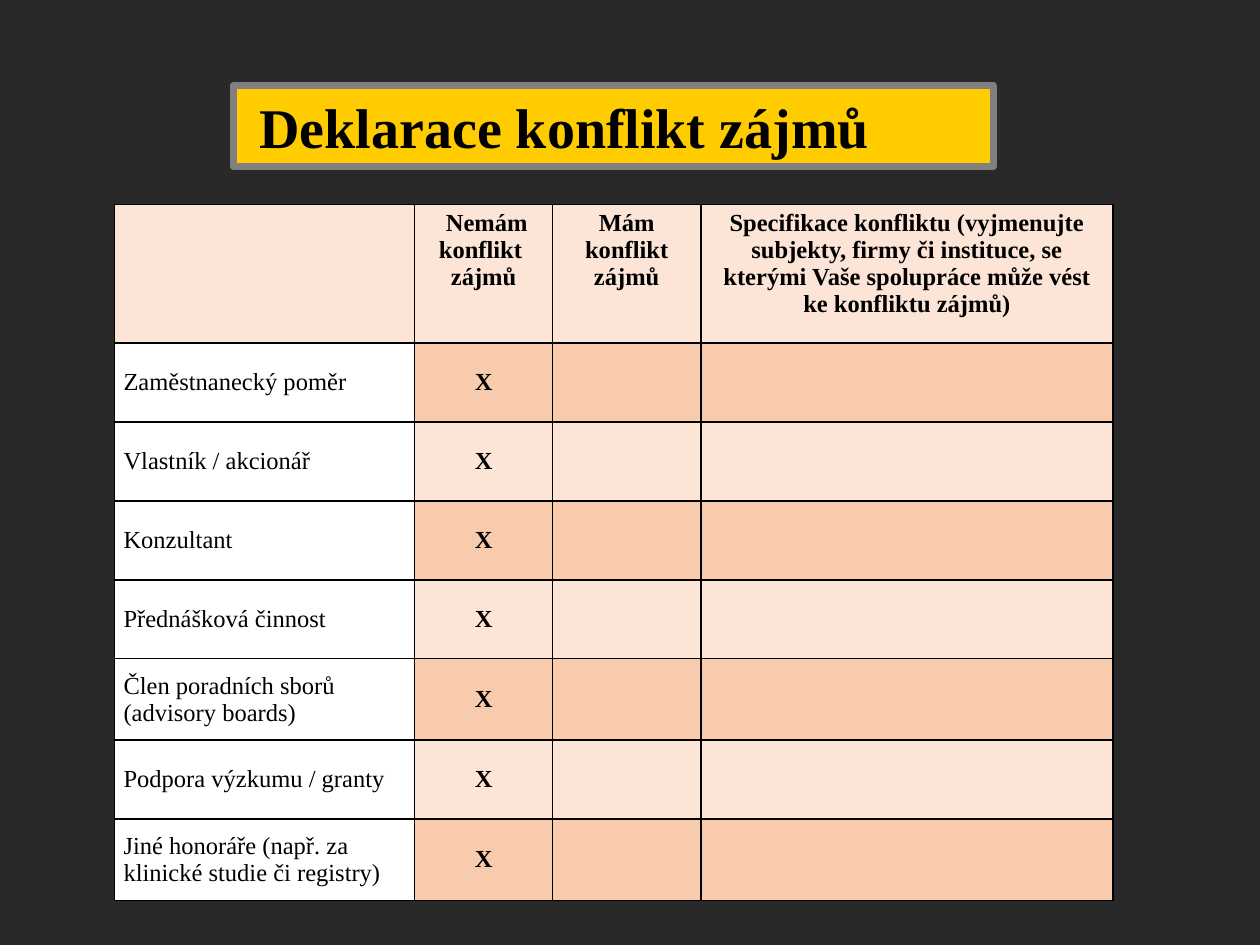
from lxml.etree import SubElement
from pptx import Presentation
from pptx.dml.color import RGBColor
from pptx.enum.text import MSO_ANCHOR as Anchor, MSO_AUTO_SIZE as AutoSize, PP_ALIGN as Align
from pptx.oxml.ns import qn
from pptx.util import Cm, Pt

COLORS = {
    "background": "292929",
    "black": "000000",
    "white": "FFFFFF",
    "yellow": "FFCC00",
    "gray": "808080",
    "light": "FCE4D6",
    "dark": "F8CBAD",
}
FONT = "Times New Roman"
HEADERS = [
    "",
    " Nemám konflikt \nzájmů",
    "Mám konflikt zájmů",
    "Specifikace konfliktu (vyjmenujte subjekty, firmy či instituce, "
    "se kterými Vaše spolupráce může vést ke konfliktu zájmů)",
]
RELATIONS = [
    "Zaměstnanecký poměr",
    "Vlastník / akcionář",
    "Konzultant",
    "Přednášková činnost",
    "Člen poradních sborů (advisory boards)",
    "Podpora výzkumu / granty",
    "Jiné honoráře (např. za klinické studie či registry)",
]
COLUMN_WIDTHS = [6.05, 2.78, 2.99, 8.31]
ROW_HEIGHTS = [2.8, 1.59, 1.59, 1.59, 1.59, 1.64, 1.59, 1.64]


def format_text(text_frame, size, bold, alignment):
    for paragraph in text_frame.paragraphs:
        paragraph.alignment = alignment
        for run in paragraph.runs:
            run.font.name = FONT
            run.font.size = Pt(size)
            run.font.bold = bold
            run.font.color.rgb = RGBColor.from_string(COLORS["black"])


def fill_cell(cell, color):
    # Borders come before the fill in the cell properties
    properties = cell._tc.get_or_add_tcPr()
    for side in ("a:lnL", "a:lnR", "a:lnT", "a:lnB"):
        line = SubElement(properties, qn(side), w=str(Pt(1)))
        solid = SubElement(line, qn("a:solidFill"))
        SubElement(solid, qn("a:srgbClr"), val=COLORS["black"])
    cell.fill.solid()
    cell.fill.fore_color.rgb = RGBColor.from_string(COLORS[color])


presentation = Presentation()
presentation.slide_width = Cm(25.4)
presentation.slide_height = Cm(19.05)
slide = presentation.slides.add_slide(presentation.slide_layouts[5])
slide.background.fill.solid()
slide.background.fill.fore_color.rgb = RGBColor.from_string(COLORS["background"])

# Title
title = slide.shapes.title
title.left, title.top, title.width, title.height = Cm(4.7), Cm(1.73), Cm(15.32), Cm(1.63)
title.fill.solid()
title.fill.fore_color.rgb = RGBColor.from_string(COLORS["yellow"])
title.line.color.rgb = RGBColor.from_string(COLORS["gray"])
title.line.width = Pt(4)
title.text_frame.text = "Deklarace konflikt zájmů"
title.text_frame.auto_size = AutoSize.NONE
title.text_frame.vertical_anchor = Anchor.MIDDLE
title.text_frame.margin_left = Cm(0.53)
format_text(title.text_frame, 32, True, Align.LEFT)

# Declaration table
table = slide.shapes.add_table(
    len(ROW_HEIGHTS), len(COLUMN_WIDTHS), Cm(2.31), Cm(4.12),
    Cm(sum(COLUMN_WIDTHS)), Cm(sum(ROW_HEIGHTS)),
).table
for column, width in zip(table.columns, COLUMN_WIDTHS):
    column.width = Cm(width)
for row, height in zip(table.rows, ROW_HEIGHTS):
    row.height = Cm(height)

rows = [HEADERS] + [[relation, "X", "", ""] for relation in RELATIONS]
for row_index, texts in enumerate(rows):
    for column_index, text in enumerate(texts):
        cell = table.cell(row_index, column_index)
        is_label = row_index > 0 and column_index == 0
        band = "dark" if row_index % 2 else "light"
        fill_cell(cell, "white" if is_label else band)
        cell.margin_left = cell.margin_right = Cm(0.18)
        cell.margin_top = cell.margin_bottom = Cm(0.1)
        cell.vertical_anchor = Anchor.MIDDLE if row_index else Anchor.TOP
        cell.text_frame.text = text
        format_text(cell.text_frame, 14, not is_label, Align.LEFT if is_label else Align.CENTER)

presentation.save("out.pptx")
